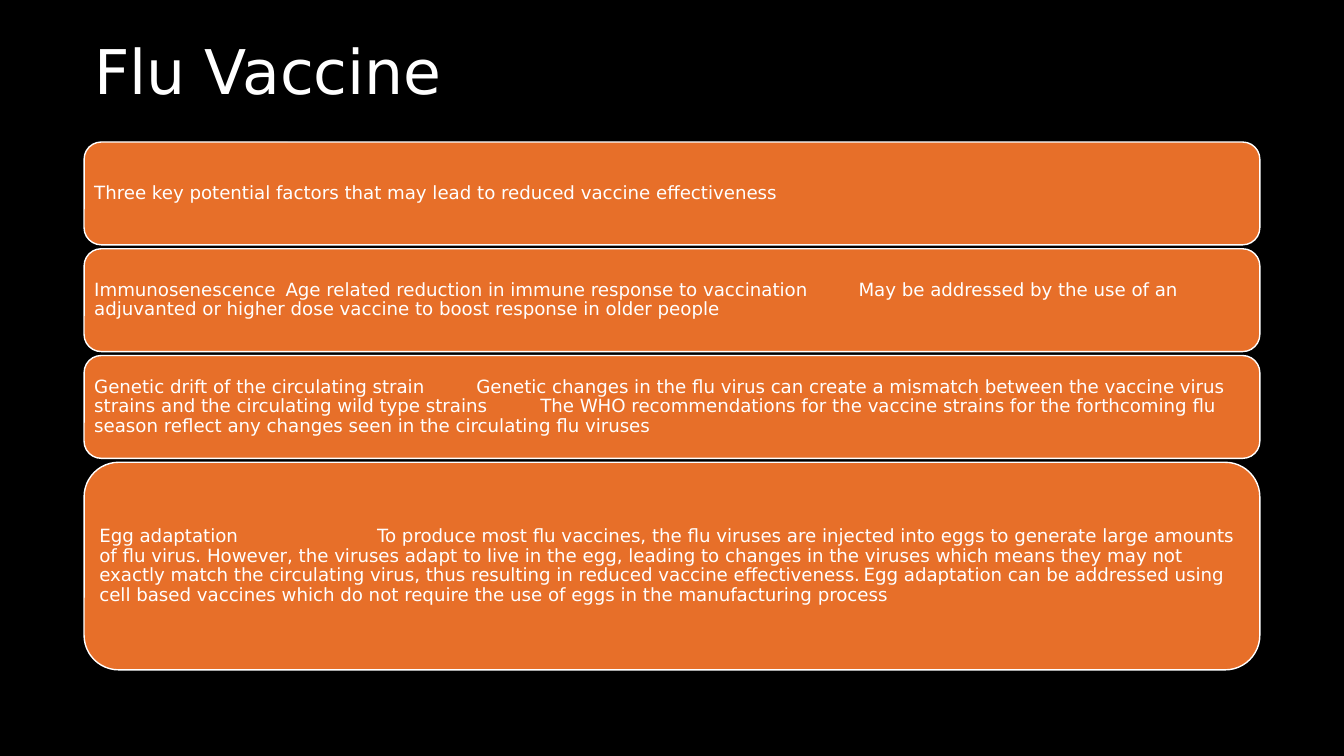
import dataclasses

import pptx
import pptx.dml.color
import pptx.enum.shapes
import pptx.enum.text
import pptx.oxml.ns
import pptx.util
from lxml import etree
from pptx.util import Cm


@dataclasses.dataclass(frozen=True)
class Theme:
    """Colours, font and type sizes of the slide."""

    background: str = "000000"
    card: str = "E76F29"
    light: str = "FFFFFF"
    font: str = "DejaVu Sans"
    title_size: int = 44
    body_size: int = 13


THEME = Theme()

CARDS = [
    ("Three key potential factors that may lead to reduced vaccine effectiveness",
     2.59, ()),
    ("Immunosenescence\tAge related reduction in immune response to vaccination\t"
     "May be addressed by the use of an adjuvanted or higher dose vaccine to boost "
     "response in older people",
     2.59, (4.82, 19.26)),
    ("Genetic drift of the circulating strain\tGenetic changes in the flu virus can "
     "create a mismatch between the vaccine virus strains and the circulating wild "
     "type strains\tThe WHO recommendations for the vaccine strains for the "
     "forthcoming flu season reflect any changes seen in the circulating flu viruses",
     2.59, (9.63, 11.24)),
    ("Egg adaptation\tTo produce most flu vaccines, the flu viruses are injected into "
     "eggs to generate large amounts of flu virus. However, the viruses adapt to live "
     "in the egg, leading to changes in the viruses which means they may not exactly "
     "match the circulating virus, thus resulting in reduced vaccine effectiveness.\t"
     "Egg adaptation can be addressed using cell based vaccines which do not require "
     "the use of eggs in the manufacturing process",
     5.23, (7, 19.26)),
]


def color(value):
    """Turn a hex string into a colour."""
    return pptx.dml.color.RGBColor.from_string(value)


def write_text(shape, text, *, size, anchor, inset, tabs=()):
    """Write one left-aligned paragraph into a shape."""
    frame = shape.text_frame
    frame.word_wrap = True
    frame.vertical_anchor = anchor
    frame.margin_left = frame.margin_right = Cm(inset)
    frame.margin_top = frame.margin_bottom = Cm(0.13)
    paragraph = frame.paragraphs[0]
    paragraph.alignment = pptx.enum.text.PP_ALIGN.LEFT
    paragraph.line_spacing = 0.9
    if tabs:
        properties = paragraph._p.get_or_add_pPr()
        tab_list = etree.SubElement(properties, pptx.oxml.ns.qn("a:tabLst"))
        for position in tabs:
            etree.SubElement(tab_list, pptx.oxml.ns.qn("a:tab"),
                             pos=str(Cm(position)), algn="l")
    run = paragraph.add_run()
    run.text = text
    run.font.name = THEME.font
    run.font.size = pptx.util.Pt(size)
    run.font.color.rgb = color(THEME.light)


def add_title(slide, text, left, top, width, height):
    """Place the slide title in the given box."""
    title = slide.shapes.add_textbox(Cm(left), Cm(top), Cm(width), Cm(height))
    write_text(title, text, size=THEME.title_size, inset=0.25,
               anchor=pptx.enum.text.MSO_ANCHOR.TOP)


def add_cards(slide, cards, left, top, width, gap):
    """Stack rounded cards downwards from the top of the given column."""
    for text, height, tabs in cards:
        card = slide.shapes.add_shape(
            pptx.enum.shapes.MSO_SHAPE.ROUNDED_RECTANGLE,
            Cm(left), Cm(top), Cm(width), Cm(height))
        card.shadow.inherit = False
        card.fill.solid()
        card.fill.fore_color.rgb = color(THEME.card)
        card.line.color.rgb = color(THEME.light)
        card.line.width = pptx.util.Pt(1)
        write_text(card, text, size=THEME.body_size, inset=0.13, tabs=tabs,
                   anchor=pptx.enum.text.MSO_ANCHOR.MIDDLE)
        top += height + gap


def main():
    """Build and save the presentation."""
    presentation = pptx.Presentation()
    presentation.slide_width = Cm(33.87)
    presentation.slide_height = Cm(19.05)
    slide = presentation.slides.add_slide(presentation.slide_layouts[6])
    slide.background.fill.solid()
    slide.background.fill.fore_color.rgb = color(THEME.background)
    add_title(slide, "Flu Vaccine", left=2.12, top=0.91, width=25.4, height=2.62)
    add_cards(slide, CARDS, left=2.12, top=3.58, width=29.63, gap=0.1)
    presentation.save("out.pptx")


if __name__ == "__main__":
    main()
